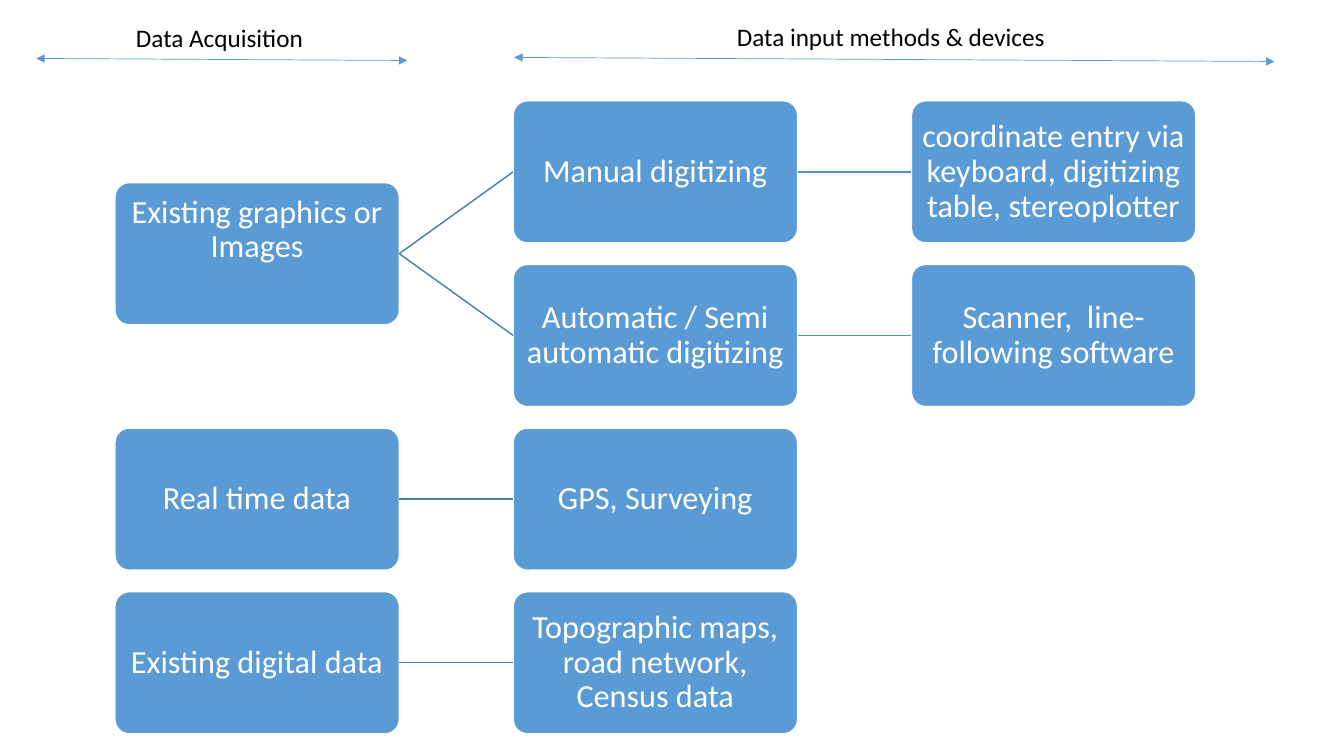
"""Build a slide that maps data acquisition sources to input methods and devices."""
import dataclasses

import pptx
import pptx.dml.color
import pptx.enum.shapes
import pptx.enum.text
import pptx.oxml
import pptx.oxml.ns
import pptx.util

Inches = pptx.util.Inches
Pt = pptx.util.Pt


@dataclasses.dataclass(frozen=True)
class Theme:
    """Colours, font and type sizes of the slide."""
    font: str = "Calibri"
    box: str = "5B9BD5"
    white: str = "FFFFFF"
    black: str = "000000"
    branch: str = "497CAB"
    leaf: str = "538DC1"
    box_size: int = 23
    label_size: int = 18


THEME = Theme()
LEFT, TOP = 1.14, 1
BOX_W, BOX_H = 2.82, 1.41
COLUMN_PITCH, ROW_PITCH = 3.95, 4.87 / 3
INSET = 0.06
RIGHT_SITE, LEFT_SITE = 3, 1

BOXES = {
    "graphics": (0, 0.5, "Existing graphics or Images"),
    "manual": (1, 0, "Manual digitizing"),
    "keyboard": (2, 0, "coordinate entry via keyboard, digitizing table, stereoplotter"),
    "automatic": (1, 1, "Automatic / Semi automatic digitizing"),
    "scanner": (2, 1, "Scanner,  line-following software"),
    "realtime": (0, 2, "Real time data"),
    "gps": (1, 2, "GPS, Surveying"),
    "digital": (0, 3, "Existing digital data"),
    "maps": (1, 3, "Topographic maps, road network, Census data"),
}
LINKS = [
    ("graphics", "manual", THEME.branch),
    ("manual", "keyboard", THEME.leaf),
    ("graphics", "automatic", THEME.branch),
    ("automatic", "scanner", THEME.leaf),
    ("realtime", "gps", THEME.branch),
    ("digital", "maps", THEME.branch),
]
SPANS = [((4.04, 0.6), (0.36, 0.58)), ((5.1, 0.57), (12.64, 0.61))]
LABELS = [
    ("Data Acquisition", 1.25, 0.17, 1.91),
    ("Data input methods & devices", 7.21, 0.16, 3.33),
]


def rgb(value):
    """Return the colour for a hex string."""
    return pptx.dml.color.RGBColor.from_string(value)


def write_text(tf, text, *, size, color, align, spacing=1.0):
    """Write one formatted paragraph into a text frame."""
    tf.word_wrap = True
    p = tf.paragraphs[0]
    p.alignment = align
    p.line_spacing = spacing
    r = p.add_run()
    r.text = text
    r.font.name = THEME.font
    r.font.size = Pt(size)
    r.font.color.rgb = rgb(color)


def add_box(s, column, row, text, bottom_inset=INSET):
    """Add a rounded box at a grid place."""
    sp = s.shapes.add_shape(
        pptx.enum.shapes.MSO_SHAPE.ROUNDED_RECTANGLE,
        Inches(LEFT + column * COLUMN_PITCH), Inches(TOP + row * ROW_PITCH),
        Inches(BOX_W), Inches(BOX_H))
    sp.adjustments[0] = 0.1
    sp.shadow.inherit = False
    sp.fill.solid()
    sp.fill.fore_color.rgb = rgb(THEME.box)
    sp.line.color.rgb = rgb(THEME.white)
    sp.line.width = Pt(1)
    tf = sp.text_frame
    tf.margin_left = tf.margin_right = tf.margin_top = Inches(INSET)
    tf.margin_bottom = Inches(bottom_inset)
    tf.vertical_anchor = pptx.enum.text.MSO_ANCHOR.MIDDLE
    write_text(tf, text, size=THEME.box_size, color=THEME.white,
               align=pptx.enum.text.PP_ALIGN.CENTER, spacing=0.9)
    return sp


def add_line(s, start, end, color, width):
    """Add a straight line without shadow."""
    line = s.shapes.add_connector(
        pptx.enum.shapes.MSO_CONNECTOR.STRAIGHT,
        *(Inches(v) for v in (*start, *end)))
    line.line.color.rgb = rgb(color)
    line.line.width = Pt(width)
    props = line._element.spPr
    props.append(pptx.oxml.parse_xml(
        f'<a:effectLst {pptx.oxml.ns.nsdecls("a")}/>'))
    return line


def add_link(s, source, target, color):
    """Join the right side of one box to the left side of another."""
    line = add_line(s, (0, 0), (0, 0), color, 1)
    line.begin_connect(source, RIGHT_SITE)
    line.end_connect(target, LEFT_SITE)


def add_span(s, start, end):
    """Add a thin arrow with a head at both ends."""
    line = add_line(s, start, end, THEME.box, 0.5)
    ln = line.line._get_or_add_ln()
    for tag in ("headEnd", "tailEnd"):
        ln.append(pptx.oxml.parse_xml(
            f'<a:{tag} {pptx.oxml.ns.nsdecls("a")} type="triangle"/>'))


def add_label(s, text, left, top, width):
    """Add a heading above a span arrow."""
    sp = s.shapes.add_textbox(Inches(left), Inches(top), Inches(width), Inches(0.4))
    write_text(sp.text_frame, text, size=THEME.label_size, color=THEME.black,
               align=pptx.enum.text.PP_ALIGN.LEFT)


def main():
    """Build and save the slide."""
    prs = pptx.Presentation()
    prs.slide_width, prs.slide_height = Inches(13.33), Inches(7.5)
    s = prs.slides.add_slide(prs.slide_layouts[6])
    raised = {"graphics": 0.53}
    boxes = {name: add_box(s, *place, raised.get(name, INSET))
             for name, place in BOXES.items()}
    for source, target, color in LINKS:
        add_link(s, boxes[source], boxes[target], color)
    for start, end in SPANS:
        add_span(s, start, end)
    for label in LABELS:
        add_label(s, *label)
    prs.save("out.pptx")


if __name__ == "__main__":
    main()
